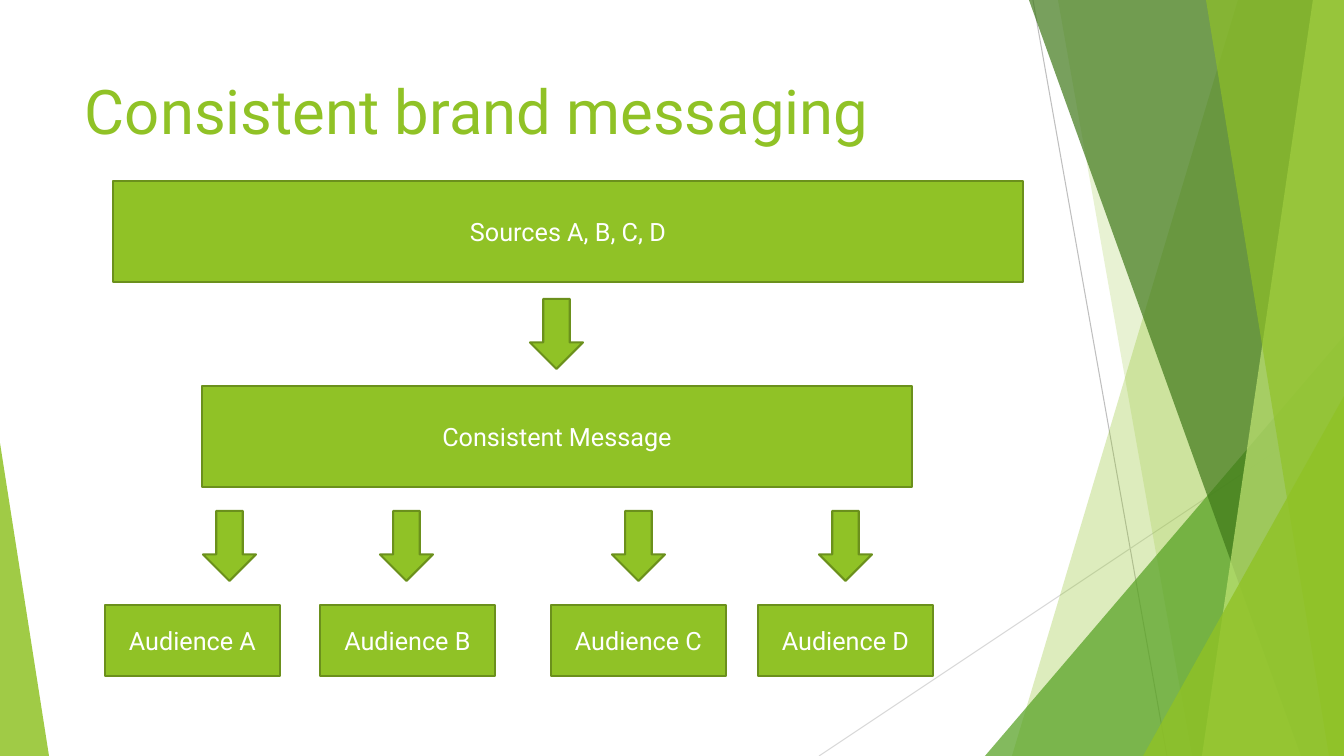
import pptx
import pptx.dml.color
import pptx.enum.shapes
import pptx.enum.text
import pptx.oxml
import pptx.oxml.ns
import pptx.util

EMU_PER_PX = 914400 / 100.8
WIDTH, HEIGHT = 1344, 756
LIME, DARK_LIME, WHITE = "90C226", "6B901C", "FFFFFF"
SHAPES = pptx.enum.shapes.MSO_SHAPE
ALIGN = pptx.enum.text.PP_ALIGN
ANCHOR = pptx.enum.text.MSO_ANCHOR


def px(length):
    return pptx.util.Emu(round(length * EMU_PER_PX))


def color(value):
    return pptx.dml.color.RGBColor.from_string(value)


def append_xml(parent, tag, attributes=""):
    namespace = pptx.oxml.ns.nsdecls("a")
    parent.append(pptx.oxml.parse_xml(f"<a:{tag} {namespace} {attributes}/>"))


def write_text(shape, text, size=18, fill=WHITE, align=ALIGN.CENTER, anchor=ANCHOR.MIDDLE):
    frame = shape.text_frame
    frame.word_wrap = True
    frame.vertical_anchor = anchor
    paragraph = frame.paragraphs[0]
    paragraph.text = text
    paragraph.alignment = align
    paragraph.font.name = "Roboto"
    paragraph.font.size = pptx.util.Pt(size)
    paragraph.font.color.rgb = color(fill)


def paint(shape, fill, opacity=100, outline=None):
    shape.shadow.inherit = False
    shape.fill.solid()
    shape.fill.fore_color.rgb = color(fill)
    if opacity < 100:
        solid = shape.fill._xPr.solidFill
        append_xml(solid[0], "alpha", f'val="{opacity * 1000}"')
    if outline:
        shape.line.color.rgb = color(outline)
        shape.line.width = pptx.util.Pt(1.5)
    else:
        shape.line.fill.background()


def add_preset(slide, kind, left, top, width, height):
    return slide.shapes.add_shape(kind, px(left), px(top), px(width), px(height))


def add_hairline(slide, start, end, stroke):
    line = slide.shapes.add_connector(
        pptx.enum.shapes.MSO_CONNECTOR.STRAIGHT, *map(px, start + end))
    line.line.color.rgb = color(stroke)
    line.line.width = pptx.util.Pt(0.75)
    append_xml(line._element.spPr, "effectLst")


def add_right_band(slide, top_x, bottom_x, fill, opacity):
    builder = slide.shapes.build_freeform(top_x, 0, scale=EMU_PER_PX)
    builder.add_line_segments([(WIDTH, 0), (WIDTH, HEIGHT), (bottom_x, HEIGHT)])
    paint(builder.convert_to_shape(), fill, opacity)


def add_corner_triangle(slide, left, width, height, peak, fill, opacity):
    triangle = add_preset(slide, SHAPES.ISOSCELES_TRIANGLE, left, HEIGHT - height, width, height)
    triangle.adjustments[0] = peak
    paint(triangle, fill, opacity)


def add_box(slide, text, left, top, width, height):
    box = add_preset(slide, SHAPES.RECTANGLE, left, top, width, height)
    paint(box, LIME, outline=DARK_LIME)
    write_text(box, text)


def add_down_arrow(slide, left, top):
    arrow = add_preset(slide, SHAPES.DOWN_ARROW, left, top, 53, 70)
    paint(arrow, LIME, outline=DARK_LIME)


def add_backdrop(slide):
    add_hairline(slide, (1033, 0), (1167, HEIGHT), "BFBFBF")
    add_hairline(slide, (WIDTH, 406), (819, HEIGHT), "D9D9D9")
    add_right_band(slide, 1238, 1012, LIME, 30)
    add_right_band(slide, 1058, 1192, LIME, 20)
    add_corner_triangle(slide, 985, 359, 420, 1, "54A021", 72)
    add_right_band(slide, 1029, 1301, "3F7819", 70)
    add_right_band(slide, 1313, 1202, "C0E474", 70)
    add_right_band(slide, 1206, 1329, LIME, 65)
    add_corner_triangle(slide, 1143, 201, 360, 1, LIME, 80)
    add_corner_triangle(slide, 0, 49, 313, 0, LIME, 85)


def main():
    presentation = pptx.Presentation()
    presentation.slide_width = px(WIDTH)
    presentation.slide_height = px(HEIGHT)
    slide = presentation.slides.add_slide(presentation.slide_layouts[6])
    add_backdrop(slide)

    title = slide.shapes.add_textbox(px(75), px(68), px(948), px(145))
    write_text(title, "Consistent brand messaging", size=44, fill=LIME,
               align=ALIGN.LEFT, anchor=ANCHOR.TOP)

    add_box(slide, "Sources A, B, C, D", 113, 181, 910, 101)
    add_down_arrow(slide, 530, 299)
    add_box(slide, "Consistent Message", 202, 386, 710, 101)

    audiences = [("A", 105, 203), ("B", 320, 380), ("C", 551, 612), ("D", 758, 819)]
    for letter, box_left, arrow_left in audiences:
        add_down_arrow(slide, arrow_left, 511)
        add_box(slide, f"Audience {letter}", box_left, 605, 175, 71)

    presentation.save("out.pptx")


if __name__ == "__main__":
    main()
